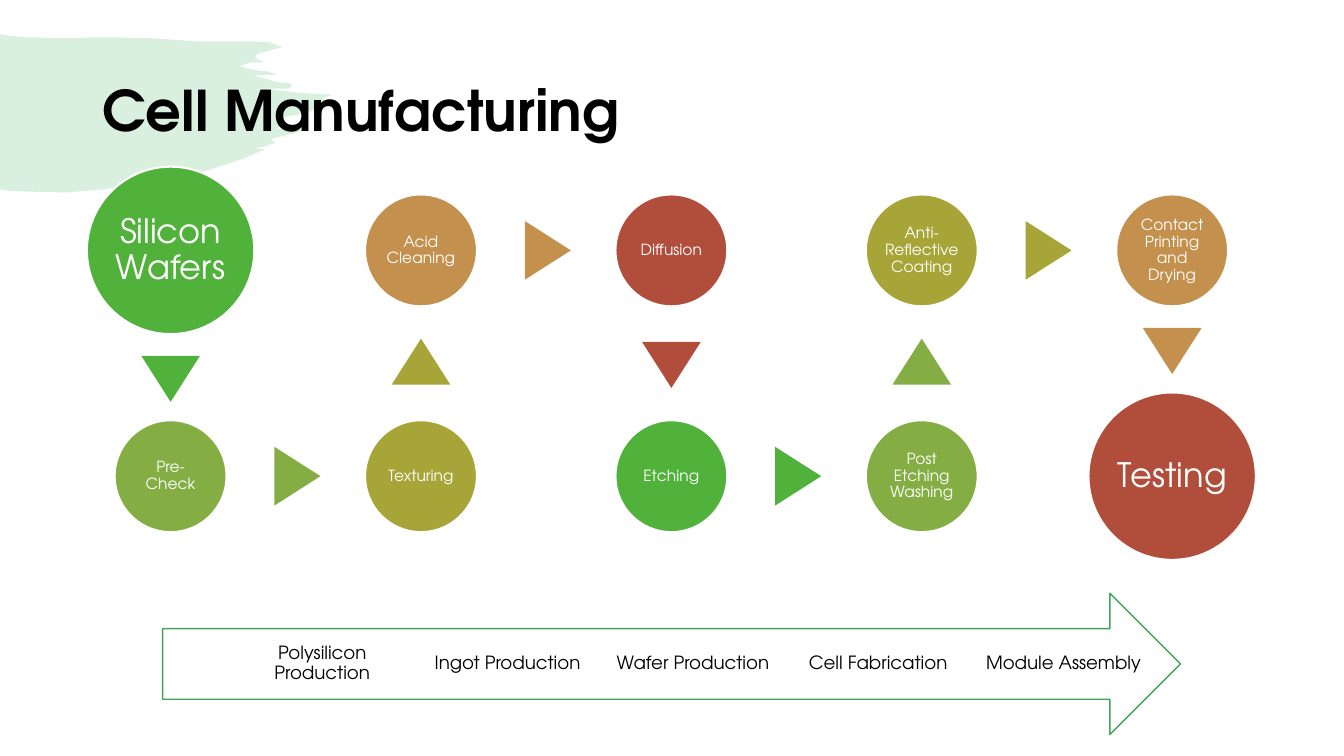
from lxml.etree import SubElement
from pptx import Presentation
from pptx.dml.color import RGBColor
from pptx.enum.shapes import MSO_SHAPE
from pptx.enum.text import MSO_ANCHOR, PP_ALIGN
from pptx.oxml.ns import qn
from pptx.util import Cm, Pt


def paint(shape, fill, line=None, width=1):
    shape.shadow.inherit = False
    shape.fill.solid()
    shape.fill.fore_color.rgb = RGBColor.from_string(fill)
    if line:
        shape.line.color.rgb = RGBColor.from_string(line)
        shape.line.width = Pt(width)
    else:
        shape.line.fill.background()


def write(shape, text, size, color, align=PP_ALIGN.CENTER, inset=0.05, bold=False):
    frame = shape.text_frame
    frame.text = text
    frame.word_wrap = True
    frame.vertical_anchor = MSO_ANCHOR.MIDDLE
    frame.margin_left = frame.margin_right = Cm(inset)
    frame.margin_top = frame.margin_bottom = Cm(inset)
    paragraph = frame.paragraphs[0]
    paragraph.alignment = align
    paragraph.line_spacing = 0.9
    font = paragraph.runs[0].font
    font.name = "TeX Gyre Adventor"
    font.size = Pt(size)
    font.bold = bold
    font.color.rgb = RGBColor.from_string(color)


prs = Presentation()
prs.slide_width = Cm(33.87)
prs.slide_height = Cm(19.05)
slide = prs.slides.add_slide(prs.slide_layouts[6])
shapes = slide.shapes

brush_outline = [
    (0, 34), (6, 35), (25, 37), (66, 38), (102, 37), (151, 38), (194, 41), (248, 41),
    (268, 42), (280, 47), (271, 49), (255, 54), (253, 57), (256, 59), (262, 62),
    (248, 62), (238, 66), (246, 68), (256, 70), (266, 71), (275, 74), (251, 75),
    (263, 78), (273, 81), (280, 82), (288, 83), (290, 85), (287, 88), (284, 88),
    (263, 88), (295, 92), (330, 94), (321, 97), (322, 103), (318, 106), (307, 111),
    (300, 113), (283, 116), (280, 120), (278, 125), (274, 128), (308, 128), (269, 138),
    (273, 142), (252, 148), (263, 148), (240, 158), (197, 172), (155, 180), (102, 188),
    (65, 191), (23, 190), (7, 189), (0, 188),
]
builder = shapes.build_freeform(*brush_outline[0], scale=Cm(2.54) / 100)
builder.add_line_segments(brush_outline[1:], close=True)
brush = builder.convert_to_shape()
paint(brush, "47B662")
brush_color = brush.fill._xPr.find(qn("a:solidFill")).find(qn("a:srgbClr"))
SubElement(brush_color, qn("a:alpha")).set("val", "20000")

title = shapes.add_textbox(Cm(2.33), Cm(1.01), Cm(29.21), Cm(3.68))
write(title, "Cell Manufacturing", 40, "000000", PP_ALIGN.LEFT, 0.25, True)

supply_chain = shapes.add_shape(MSO_SHAPE.RIGHT_ARROW, Cm(4.1), Cm(14.95), Cm(25.65), Cm(3.56))
paint(supply_chain, "FFFFFF", "40A559")
stages = ["Polysilicon Production", "Ingot Production", "Wafer Production",
          "Cell Fabrication", "Module Assembly"]
for i, stage in enumerate(stages):
    label = shapes.add_textbox(Cm(6.17 + 4.67 * i), Cm(15.84), Cm(3.9), Cm(1.78))
    write(label, stage, 13, "000000", inset=0)

steps = ["Silicon Wafers", "Pre-Check", "Texturing", "Acid Cleaning", "Diffusion", "Etching",
         "Post Etching Washing", "Anti-Reflective Coating", "Contact Printing and Drying", "Testing"]
palette = ["50B13B", "84AE44", "A7A537", "C3904D", "B14D3B"]
column_x = [4.3 + 6.31 * column for column in range(5)]
row_y = [6.31, 12]
centers = [(column_x[i // 2], row_y[(i + 1) // 2 % 2]) for i in range(len(steps))]
ends = (0, len(steps) - 1)
diameters = [4.22 if i in ends else 2.82 for i in range(len(steps))]
base, height = 1.48, 1.16

for i, (step, (x, y), diameter) in enumerate(zip(steps, centers, diameters)):
    color = palette[i % len(palette)]
    circle = shapes.add_shape(MSO_SHAPE.OVAL, Cm(x - diameter / 2), Cm(y - diameter / 2),
                              Cm(diameter), Cm(diameter))
    paint(circle, color, "FFFFFF", 1.5)
    write(circle, step, 24 if i in ends else 11, "FFFFFF")
    if i == ends[1]:
        break
    next_x, next_y = centers[i + 1]
    way_x = (next_x > x) - (next_x < x)
    way_y = (next_y > y) - (next_y < y)
    shift = (diameter - diameters[i + 1]) / 4 + 0.04
    middle_x = (x + next_x) / 2 + way_x * shift
    middle_y = (y + next_y) / 2 + way_y * shift
    pointer = shapes.add_shape(MSO_SHAPE.ISOSCELES_TRIANGLE, Cm(middle_x - base / 2),
                               Cm(middle_y - height / 2), Cm(base), Cm(height))
    pointer.rotation = 90 if way_x else 90 + 90 * way_y
    paint(pointer, color)

prs.save("out.pptx")
